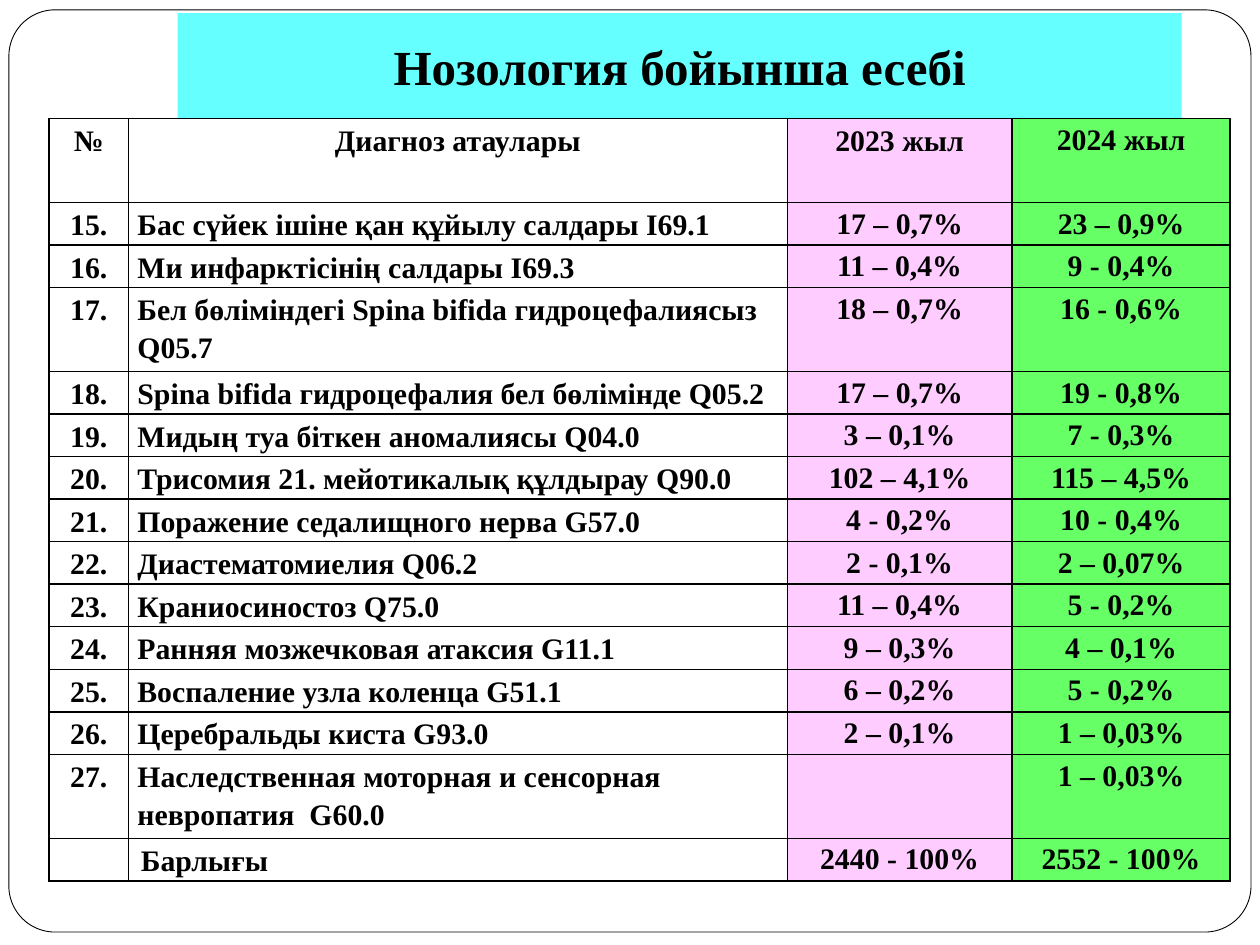
from dataclasses import dataclass

from lxml import etree
from pptx import Presentation
from pptx.dml.color import RGBColor
from pptx.enum.shapes import MSO_SHAPE
from pptx.enum.text import MSO_ANCHOR, MSO_AUTO_SIZE, PP_ALIGN
from pptx.oxml.ns import qn
from pptx.util import Cm, Pt

ROUND = MSO_SHAPE.ROUNDED_RECTANGLE
MIDDLE, TOP = MSO_ANCHOR.MIDDLE, MSO_ANCHOR.TOP
GROW = MSO_AUTO_SIZE.SHAPE_TO_FIT_TEXT
LEFT, CENTER = PP_ALIGN.LEFT, PP_ALIGN.CENTER


@dataclass(frozen=True)
class Theme:
    """Colours, type sizes and line widths."""
    font: str = "Times New Roman"
    ink: str = "000000"
    paper: str = "FFFFFF"
    banner: str = "66FFFF"
    past: str = "FFCCFF"
    now: str = "66FF66"
    head: int = 28
    body: int = 17
    frame: float = 0.5
    rule: int = 1


THEME = Theme()
TITLE = "Нозология бойынша есебі"
HEADS = ("№", "Диагноз атаулары", "2023 жыл", "2024 жыл")
FIRST = 15
CASES = (
    ("Бас сүйек ішіне қан құйылу салдары I69.1", "17 – 0,7%", "23 – 0,9%"),
    ("Ми инфарктісінің салдары I69.3", "11 – 0,4%", "9 - 0,4%"),
    ("Бел бөліміндегі Spina bifida гидроцефалиясыз Q05.7", "18 – 0,7%", "16 - 0,6%"),
    ("Spina bifida гидроцефалия бел бөлімінде Q05.2", "17 – 0,7%", "19 - 0,8%"),
    ("Мидың туа біткен аномалиясы Q04.0", "3 – 0,1%", "7 - 0,3%"),
    ("Трисомия 21. мейотикалық құлдырау Q90.0", "102 – 4,1%", "115 – 4,5%"),
    ("Поражение седалищного нерва G57.0", "4 - 0,2%", "10 - 0,4%"),
    ("Диастематомиелия Q06.2", "2 - 0,1%", "2 – 0,07%"),
    ("Краниосиностоз Q75.0", "11 – 0,4%", "5 - 0,2%"),
    ("Ранняя мозжечковая атаксия G11.1", "9 – 0,3%", "4 – 0,1%"),
    ("Воспаление узла коленца G51.1", "6 – 0,2%", "5 - 0,2%"),
    ("Церебральды киста G93.0", "2 – 0,1%", "1 – 0,03%"),
    ("Наследственная моторная и сенсорная невропатия  G60.0", "", "1 – 0,03%"),
)
TOTAL = ("", " Барлығы", "2440 - 100%", "2552 - 100%")
WIDTHS = (1.6, 13.28, 4.53, 4.4)
FILLS = (THEME.paper, THEME.paper, THEME.past, THEME.now)
PADS = {"head": (0.1, 0.1, 0.1, 0), "case": (0.1, 0.18, 0, 0), "total": (0, 0.1, 0, 0)}
LOW, TALL = 0.85, 1.69
WRAP = 48


def assign(obj, vals):
    """Set each named attribute of an object."""
    for name, val in vals.items():
        setattr(obj, name, val)


def paint(fill, tint):
    """Fill with one solid colour."""
    fill.solid()
    fill.fore_color.rgb = RGBColor.from_string(tint)


def write(para, text, size, align):
    """Write one bold run into a paragraph."""
    para.alignment = align
    run = para.add_run()
    run.text = text
    assign(run.font, {"name": THEME.font, "size": Pt(size), "bold": True})
    run.font.color.rgb = RGBColor.from_string(THEME.ink)


def edge(cell):
    """Rule all four sides of a cell."""
    props = cell._tc.get_or_add_tcPr()
    for spot, side in enumerate(("lnL", "lnR", "lnT", "lnB")):
        line = etree.Element(qn(f"a:{side}"), w=str(Pt(THEME.rule)))
        fill = etree.SubElement(line, qn("a:solidFill"))
        etree.SubElement(fill, qn("a:srgbClr"), val=THEME.ink)
        props.insert(spot, line)


def add_frame(slide, box):
    """Place the rounded page frame behind everything."""
    frame = slide.shapes.add_shape(ROUND, *map(Cm, box))
    frame.adjustments[0] = 0.05
    frame.shadow.inherit = False
    paint(frame.fill, THEME.paper)
    paint(frame.line.fill, THEME.ink)
    frame.line.width = Pt(THEME.frame)
    slide.shapes._spTree.insert(2, frame._element)


def add_title(slide, box):
    """Place the title banner."""
    title = slide.shapes.title
    assign(title, dict(zip(("left", "top", "width", "height"), map(Cm, box))))
    paint(title.fill, THEME.banner)
    text = title.text_frame
    assign(text, {"word_wrap": True, "auto_size": GROW, "vertical_anchor": MIDDLE})
    write(text.paragraphs[0], TITLE, THEME.head, CENTER)


def fill_cell(cell, text, tint, pad, align):
    """Format one cell and write its text."""
    edge(cell)
    paint(cell.fill, tint)
    assign(cell, {"margin_left": Cm(pad), "margin_right": Cm(pad),
                  "margin_top": Cm(0.03 if pad else 0), "margin_bottom": 0,
                  "vertical_anchor": TOP})
    if text:
        para = cell.text_frame.paragraphs[0]
        para.line_spacing = 1.15
        write(para, text, THEME.body, align)


def add_table(slide, left, top):
    """Place the table of diagnoses by year."""
    rows = [("head", HEADS)]
    rows += [("case", (f"{num}.", *case)) for num, case in enumerate(CASES, FIRST)]
    rows.append(("total", TOTAL))
    highs = [TALL if kind == "head" or len(row[1]) > WRAP else LOW for kind, row in rows]
    grid = slide.shapes.add_table(len(rows), len(WIDTHS), Cm(left), Cm(top),
                                  Cm(sum(WIDTHS)), Cm(sum(highs))).table
    assign(grid, {"first_row": False, "horz_banding": False})
    for col, width in zip(grid.columns, WIDTHS):
        col.width = Cm(width)
    for r, (kind, row) in enumerate(rows):
        grid.rows[r].height = Cm(highs[r])
        for c, text in enumerate(row):
            align = LEFT if c == 1 and kind != "head" else CENTER
            fill_cell(grid.cell(r, c), text, FILLS[c], PADS[kind][c], align)


def main():
    """Build and save the slide."""
    deck = Presentation()
    assign(deck, {"slide_width": Cm(25.4), "slide_height": Cm(19.05)})
    slide = deck.slides.add_slide(deck.slide_layouts.get_by_name("Title Only"))
    add_frame(slide, (0.18, 0.2, 25.04, 18.59))
    add_title(slide, (3.58, 0.6, 20.24, 1.45))
    add_table(slide, 0.99, 2.39)
    deck.save("out.pptx")


if __name__ == "__main__":
    main()
